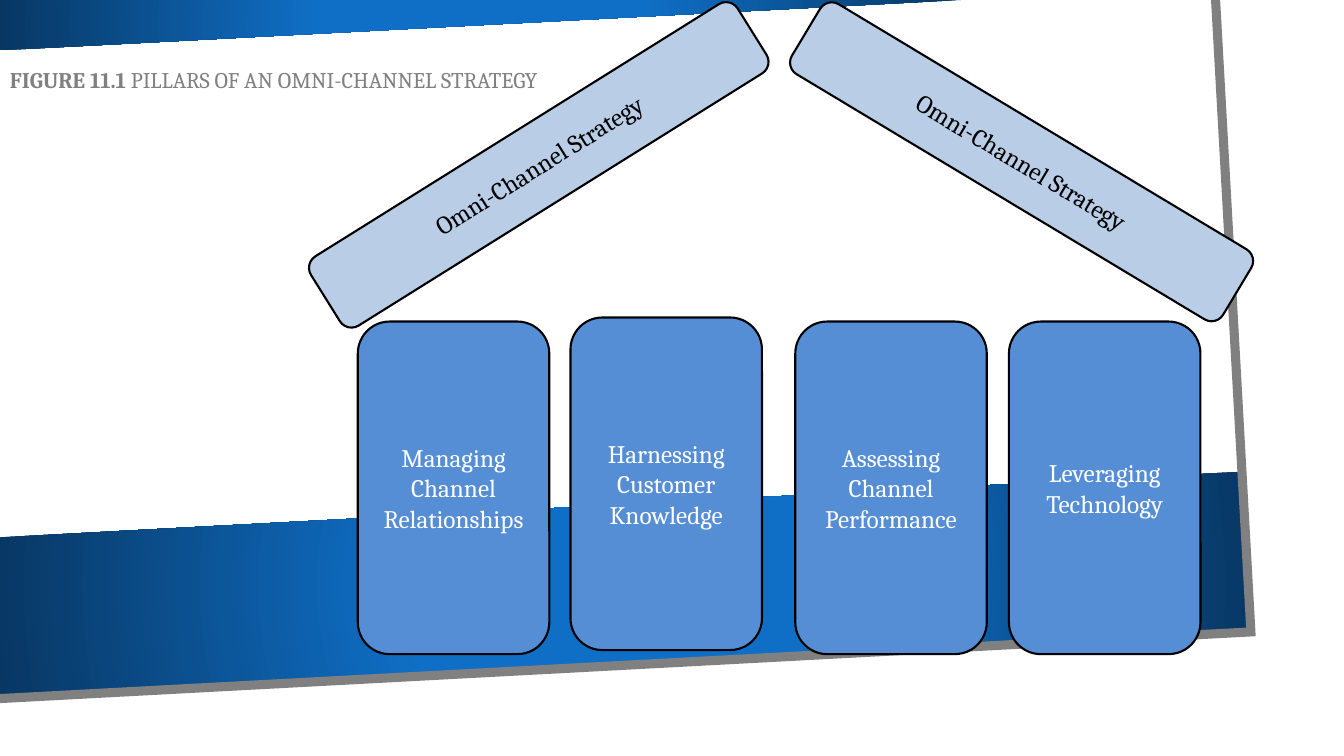
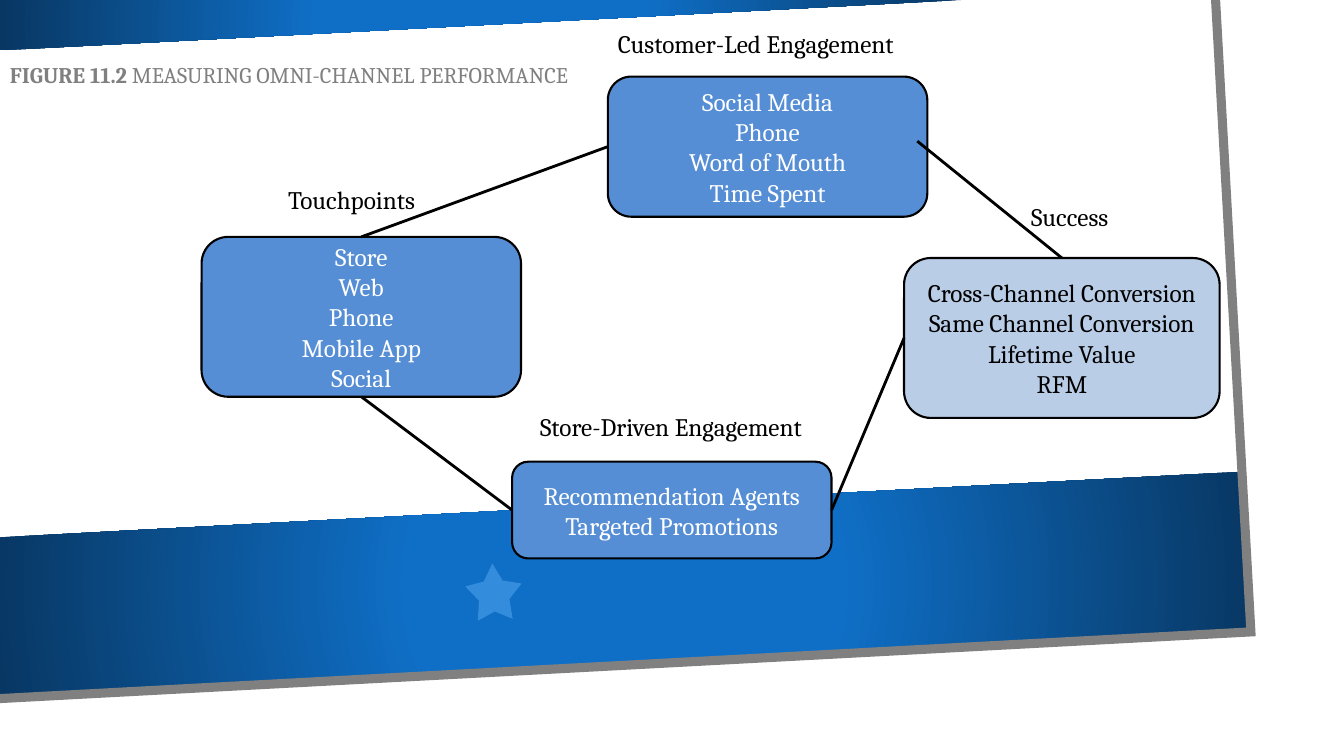
"""Build two slides on the pillars and the measurement of an omni-channel strategy."""
from pptx import Presentation
from pptx.dml.color import RGBColor
from pptx.enum.shapes import MSO_CONNECTOR as Connector, MSO_SHAPE as Shape
from pptx.enum.text import MSO_ANCHOR as Anchor, PP_ALIGN as Align
from pptx.oxml import parse_xml
from pptx.oxml.ns import nsdecls, qn
from pptx.util import Pt

COLORS = {
    "white": "FFFFFF", "black": "000000", "gray": "808080",
    "blue": "558ED5", "pale": "B9CDE7", "star": "59AAF2",
    "band": "0F6FC6", "band_edge": "083763",
}
RGB = {name: RGBColor.from_string(value) for name, value in COLORS.items()}
FONT = "Cambria"


def write(box, text, lead="", size=18, color="black", align=Align.LEFT,
          anchor=Anchor.TOP, spacing=None):
    """Fill a box with one paragraph per line, after an optional bold lead."""
    frame = box.text_frame
    frame.word_wrap = True
    frame.vertical_anchor = anchor
    for index, line in enumerate(text.split("\n")):
        para = frame.add_paragraph() if index else frame.paragraphs[0]
        para.alignment = align
        para.line_spacing = spacing
        parts = [(lead, True), (line, False)] if lead and not index else [(line, False)]
        for words, bold in parts:
            span = para.add_run()
            span.text = words
            span.font.name = FONT
            span.font.size = Pt(size)
            span.font.bold = bold
            span.font.color.rgb = RGB[color]


def add_block(page, bounds, text, fill="blue", color="white", rotation=0):
    """Add an outlined rounded rectangle with centred text."""
    block = page.shapes.add_shape(Shape.ROUNDED_RECTANGLE, *map(Pt, bounds))
    block.shadow.inherit = False
    block.rotation = rotation
    block.fill.solid()
    block.fill.fore_color.rgb = RGB[fill]
    block.line.color.rgb = RGB["black"]
    block.line.width = Pt(1.5)
    write(block, text, color=color, align=Align.CENTER, anchor=Anchor.MIDDLE)
    return block


deck = Presentation()
deck.slide_width, deck.slide_height = Pt(960), Pt(540)

backdrop = [
    ("sheet", [(0, 0), (890, 0), (918.7, 470.9), (0, 518.4)]),
    ("band", [(0, 383.8), (885.6, 337), (892.1, 449.3), (0, 496.8)]),
    ("band", [(0, 0), (686.9, 0), (0, 36)]),
    ("frame", [(868.3, 0), (893.5, 451.4), (0, 499)]),
]
titles = [
    ("FIGURE 11.1 ", "PILLARS OF AN OMNI-CHANNEL STRATEGY", 39.6),
    ("FIGURE 11.2 ", "MEASURING OMNI-CHANNEL PERFORMANCE", 36),
]
pages = []
for lead, title, top in titles:
    page = deck.slides.add_slide(deck.slide_layouts[6])
    pages.append(page)
    for kind, corners in backdrop:
        start, *rest = [(Pt(x), Pt(y)) for x, y in corners]
        builder = page.shapes.build_freeform(*start)
        builder.add_line_segments(rest, close=kind != "frame")
        outline = builder.convert_to_shape()
        outline.shadow.inherit = False
        if kind == "frame":
            outline.fill.background()
            outline.line.color.rgb = RGB["gray"]
            outline.line.width = Pt(6.5)
            miter = parse_xml(f'<a:miter {nsdecls("a")} lim="800000"/>')
            outline._element.spPr.find(qn("a:ln")).append(miter)
            continue
        outline.line.fill.background()
        if kind == "sheet":
            outline.fill.solid()
            outline.fill.fore_color.rgb = RGB["white"]
            continue
        outline.fill.gradient()
        stops = [(0.34, "band"), (1, "band_edge")]
        for stop, (position, color) in zip(outline.fill.gradient_stops, stops):
            stop.position = position
            stop.color.rgb = RGB[color]
        gradient = outline._element.spPr.find(qn("a:gradFill"))
        radial = parse_xml(
            f'<a:path {nsdecls("a")} path="circle">'
            '<a:fillToRect l="50000" t="50000" r="50000" b="50000"/></a:path>')
        gradient.replace(gradient.find(qn("a:lin")), radial)
    box = page.shapes.add_textbox(Pt(0), Pt(top), Pt(729.4), Pt(22.3))
    write(box, title, lead=lead, size=16, color="gray", spacing=1.2)

pillars_page, measures_page = pages

pillars = [
    (255.6, 229.7, "Managing Channel Relationships"),
    (407.5, 226.8, "Harnessing Customer Knowledge"),
    (568.1, 229.7, "Assessing Channel Performance"),
    (720.7, 229.7, "Leveraging Technology"),
]
for left, top, text in pillars:
    add_block(pillars_page, (left, top, 136.8, 237.6), text)
for left, top, rotation in [(205.2, 88.6, 328), (550.1, 86.4, 31)]:
    add_block(pillars_page, (left, top, 359.3, 58.3), "Omni-Channel Strategy",
              fill="pale", color="black", rotation=rotation)

star = measures_page.shapes.add_shape(
    Shape.STAR_5_POINT, Pt(332.6), Pt(402.5), Pt(40.3), Pt(40.3))
star.shadow.inherit = False
star.rotation = 357
star.adjustments[0] = 0.27
star.line.fill.background()
star.fill.solid()
star.fill.fore_color.rgb = RGB["star"]
star_color = star._element.spPr.find(qn("a:solidFill"))[0]
star_color.append(parse_xml(f'<a:alpha {nsdecls("a")} val="50000"/>'))

touchpoints = add_block(measures_page, (144, 169.2, 228.2, 114.2),
                        "Store\nWeb\nPhone\nMobile App\nSocial")
customer_led = add_block(measures_page, (434.2, 54.7, 228.2, 100.1),
                         "Social Media\nPhone\nWord of Mouth\nTime Spent")
store_driven = add_block(measures_page, (365.8, 329.8, 228.2, 69.1),
                         "Recommendation Agents\nTargeted Promotions")
success = add_block(
    measures_page, (645.8, 184.3, 225.4, 114.2),
    "Cross-Channel Conversion\nSame Channel Conversion\nLifetime Value\nRFM",
    fill="pale", color="black")

labels = [
    (198.7, 128.2, 110.2, "Touchpoints"),
    (434.2, 16.6, 225.4, "Customer-Led Engagement"),
    (378.7, 290.2, 219.6, "Store-Driven Engagement"),
    (729.4, 140.4, 74.2, "Success"),
]
for left, top, width, text in labels:
    label = measures_page.shapes.add_textbox(Pt(left), Pt(top), Pt(width), Pt(28.8))
    write(label, text)

loose_end = (Pt(655.2), Pt(100.8))
links = [
    (touchpoints, 0, customer_led, 1),
    (touchpoints, 2, store_driven, 1),
    (store_driven, 3, success, 1),
    (success, 0, None, None),
]
for source, source_side, target, target_side in links:
    link = measures_page.shapes.add_connector(
        Connector.STRAIGHT, source.left, source.top, *loose_end)
    link.begin_connect(source, source_side)
    if target is not None:
        link.end_connect(target, target_side)
    link.line.color.rgb = RGB["black"]
    link.line.width = Pt(2)
    link._element.spPr.append(parse_xml(f'<a:effectLst {nsdecls("a")}/>'))

deck.save("out.pptx")
